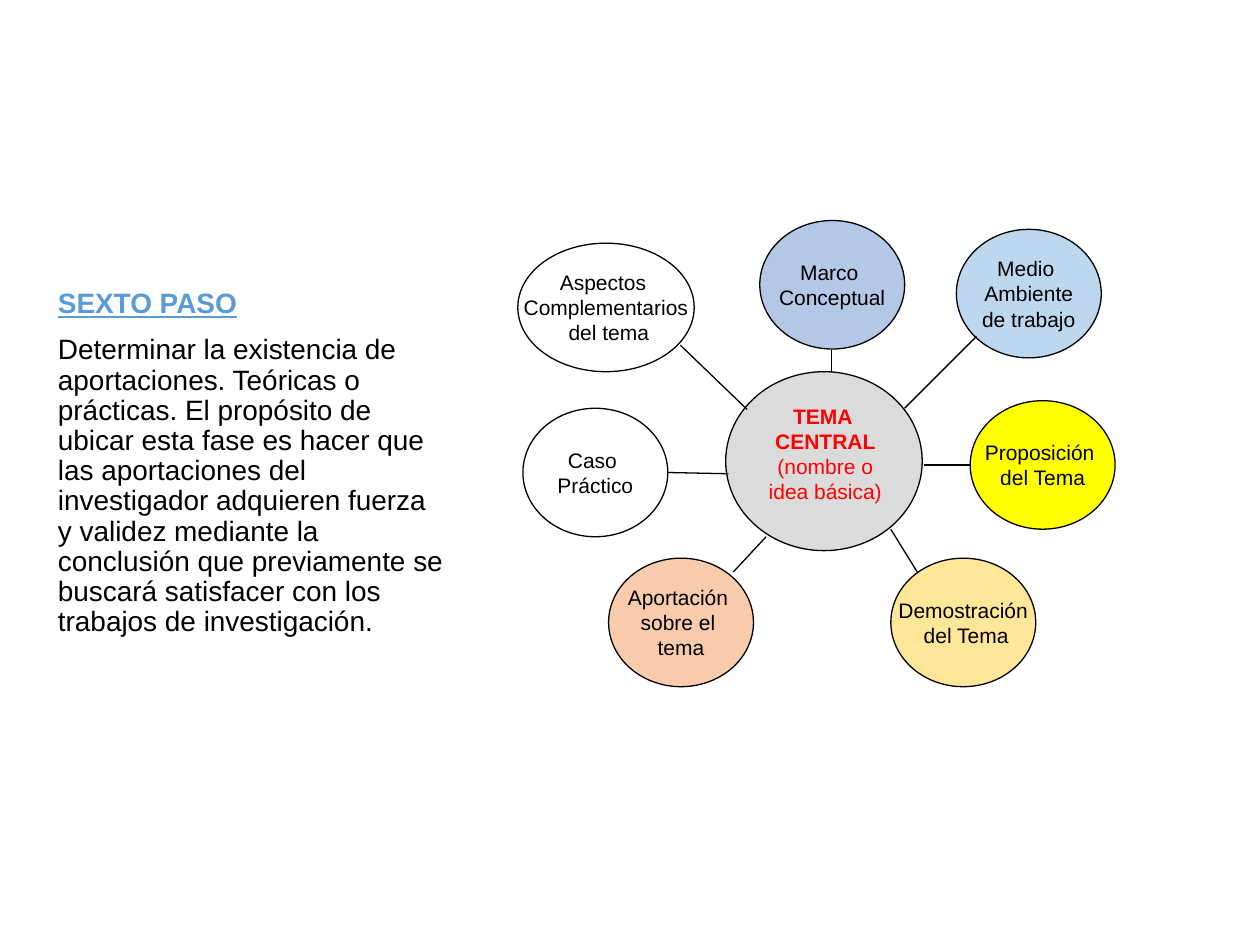
from dataclasses import dataclass

from pptx import Presentation
from pptx.dml.color import RGBColor
from pptx.enum.shapes import MSO_CONNECTOR, MSO_SHAPE
from pptx.enum.text import MSO_ANCHOR, MSO_AUTO_SIZE, PP_ALIGN
from pptx.oxml.ns import qn
from pptx.util import Inches, Pt
from lxml.etree import SubElement

COLS, ROWS = 100, 75
WIDE, HIGH = Inches(10), Inches(7.5)
NODE_W, NODE_H = 11.5, 10.2
FONT = "Arial"
HEX = {
    "black": "000000", "red": "FF0000", "title": "5B9BD5", "gray": "DBDBDB",
    "yellow": "FFFF00", "sky": "BDD7EE", "gold": "FFE699",
    "blue": "B4C7E7", "peach": "F8CBAD",
}


@dataclass
class Node:
    col: float
    row: float
    lines: tuple[str, ...] = ()
    fill: str = ""
    wide: float = NODE_W
    high: float = NODE_H


@dataclass
class Link:
    col: float
    row: float
    endcol: float
    endrow: float


HUB = Node(57.6, 29.5, fill="gray", wide=15.6, high=14.2)
NODES = (
    Node(41.1, 19.3, ("Aspectos ", "Complementarios", " del tema"), wide=14),
    Node(77, 31.8, ("Proposición ", "del Tema"), "yellow"),
    Node(75.9, 18.2, ("Medio ", "Ambiente", "de trabajo"), "sky"),
    Node(70.7, 44.3, ("Demostración", " del Tema"), "gold"),
    Node(60.3, 17.5, ("Marco ", "Conceptual"), "blue"),
    Node(48.3, 44.3, ("Aportación ", "sobre el ", "tema"), "peach"),
    Node(41.5, 32.4, ("Caso ", "Práctico")),
)
LINKS = (
    Link(54, 27.4, 59.3, 32.5),
    Link(77.5, 26.7, 71.8, 32.4),
    Link(53, 37.5, 57.8, 37.6),
    Link(73.3, 36.9, 77, 36.9),
    Link(60.8, 42.6, 58.2, 45.4),
    Link(70.7, 42, 72.8, 45.4),
    Link(66, 27.8, 66, 29.5),
)
CORE = ("TEMA ", "CENTRAL", "(nombre o", "idea básica)")
STEP = (
    "SEXTO PASO",
    "Determinar la existencia de aportaciones. Teóricas o prácticas. "
    "El propósito de ubicar esta fase es hacer que las aportaciones del "
    "investigador adquieren fuerza y validez mediante la conclusión que "
    "previamente se buscará satisfacer con los trabajos de investigación.",
)


def rgb(name: str) -> RGBColor:
    return RGBColor.from_string(HEX[name])


def grid(col: float, row: float) -> tuple[int, int]:
    return round(WIDE * col / COLS), round(HIGH * row / ROWS)


def style(para, size: int, color: str, bold: bool = False) -> None:
    for run in para.runs:
        run.font.name = FONT
        run.font.size = Pt(size)
        run.font.bold = bold
        run.font.color.rgb = rgb(color)


def label(frame, lines: tuple[str, ...], color: str, heads: int = 0) -> None:
    frame.margin_left = frame.margin_right = Inches(0.07)
    frame.margin_top = frame.margin_bottom = Inches(0.04)
    frame.text = "\n".join(lines)
    for pos, para in enumerate(frame.paragraphs):
        para.alignment = PP_ALIGN.CENTER
        style(para, 12, color, pos < heads)


def edge(line) -> None:
    line.color.rgb = rgb("black")
    line.width = Pt(0.75)


def draw_node(shapes, node: Node) -> None:
    oval = shapes.add_shape(MSO_SHAPE.OVAL, *grid(node.col, node.row),
                            *grid(node.wide, node.high))
    oval.shadow.inherit = False
    edge(oval.line)
    if node.fill:
        oval.fill.solid()
        oval.fill.fore_color.rgb = rgb(node.fill)
    else:
        oval.fill.background()
    if node.lines:
        label(oval.text_frame, node.lines, "black")
        oval.text_frame.word_wrap = False
        oval.text_frame.vertical_anchor = MSO_ANCHOR.MIDDLE


def draw_core(shapes) -> None:
    box = shapes.add_textbox(*grid(59.9, 31.6), *grid(11.2, 8.8))
    frame = box.text_frame
    label(frame, CORE, "red", heads=2)
    frame.word_wrap = True
    frame.auto_size = MSO_AUTO_SIZE.SHAPE_TO_FIT_TEXT


def draw_link(shapes, link: Link) -> None:
    line = shapes.add_connector(MSO_CONNECTOR.STRAIGHT,
                                *grid(link.col, link.row),
                                *grid(link.endcol, link.endrow))
    edge(line.line)
    SubElement(line._element.spPr, qn("a:effectLst"))


def draw_step(slide) -> None:
    body = slide.placeholders[2]
    for item in list(slide.placeholders):
        if item.placeholder_format.idx != 2:
            item._element.getparent().remove(item._element)
    body.left, body.top = grid(3.6, 22.5)
    body.width, body.height = grid(32.8, 36.9)
    frame = body.text_frame
    frame.auto_size = MSO_AUTO_SIZE.NONE
    frame.text = "\n".join(STEP)
    head, text = frame.paragraphs
    style(head, 16, "title", True)
    head.runs[0].font.underline = True
    style(text, 16, "black")
    head.space_before, text.space_before = Pt(10), Pt(9)
    for para in frame.paragraphs:
        para.line_spacing = 0.9


def main() -> None:
    deck = Presentation()
    deck.slide_width, deck.slide_height = WIDE, HIGH
    slide = deck.slides.add_slide(deck.slide_layouts[7])
    draw_step(slide)
    shapes = slide.shapes.add_group_shape().shapes
    draw_node(shapes, HUB)
    draw_core(shapes)
    for node in NODES:
        draw_node(shapes, node)
    for link in LINKS:
        draw_link(shapes, link)
    deck.save("out.pptx")


if __name__ == "__main__":
    main()
